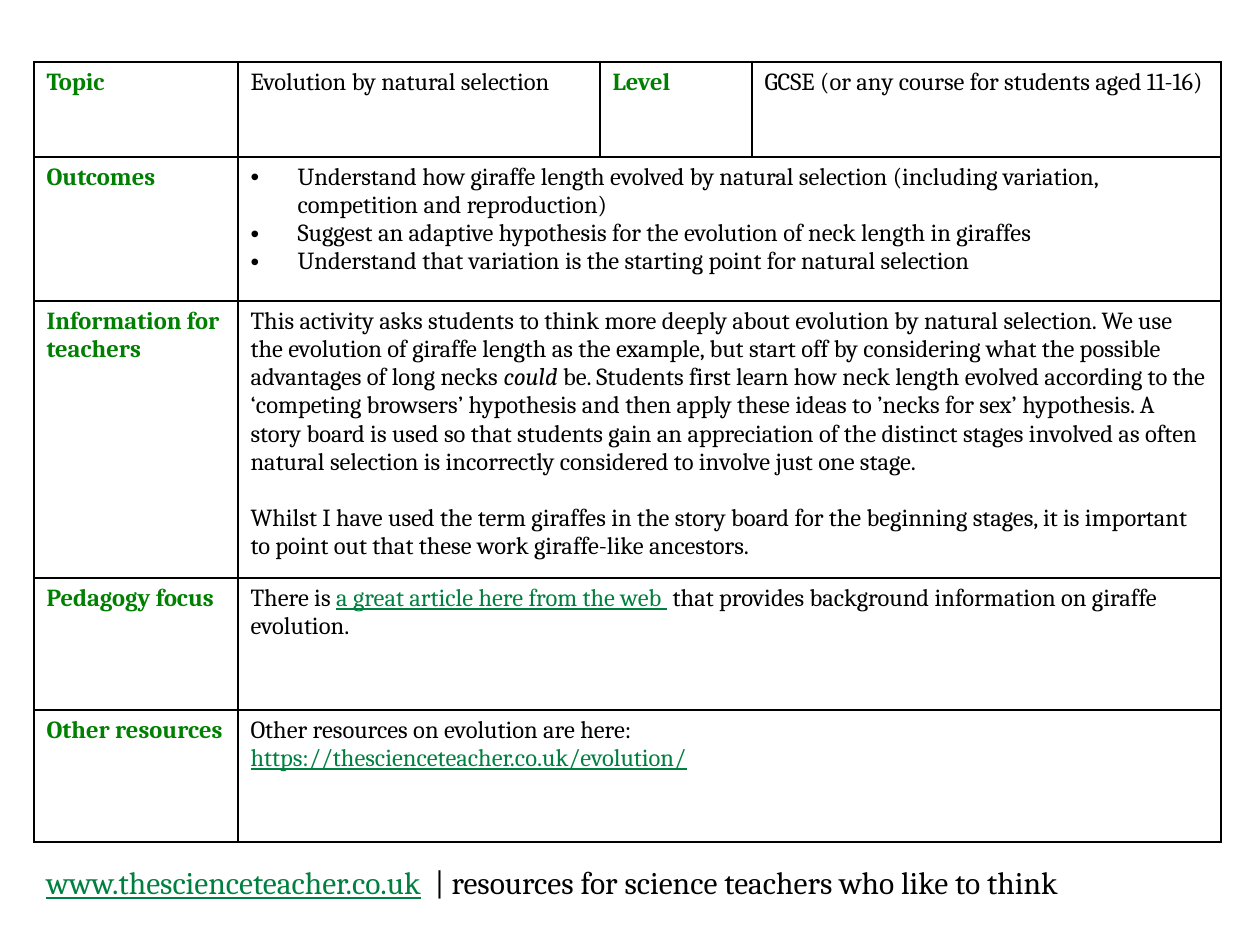
from dataclasses import dataclass

from lxml import etree
from pptx import Presentation
from pptx import util as u
from pptx.dml.color import RGBColor
from pptx.enum import text as t
from pptx.oxml.ns import qn


@dataclass(frozen=True)
class Theme:
    font: str = "Cambria"
    head: str = "008000"
    link: str = "008040"
    ink: str = "000000"
    body: int = 14
    foot: int = 18
    gap: int = 16


THEME = Theme()
PX = 914400 / 126

# Each paragraph is a list of (text, style) runs.
TOP = [
    ("Topic", "head"),
    ("Evolution by natural selection", "ink"),
    ("Level", "head"),
    ("GCSE (or any course for students aged 11-16)", "ink"),
]
ROWS = [
    ("Outcomes", [
        [("Understand how giraffe length evolved by natural selection "
          "(including variation, competition and reproduction)", "ink")],
        [("Suggest an adaptive hypothesis for the evolution of neck length "
          "in giraffes", "ink")],
        [("Understand that variation is the starting point for natural "
          "selection", "ink")],
    ]),
    ("Information for teachers", [
        [("This activity asks students to think more deeply about evolution "
          "by natural selection. We use the evolution of giraffe length as "
          "the example, but start off by considering what the possible "
          "advantages of long necks ", "ink"),
         ("could", "italic"),
         (" be. Students first learn how neck length evolved according to "
          "the ‘competing browsers’ hypothesis and then apply these ideas to "
          "’necks for sex’ hypothesis. A story board is used so that students "
          "gain an appreciation of the distinct stages involved as often "
          "natural selection is incorrectly considered to involve just one "
          "stage.", "ink")],
        [("Whilst I have used the term giraffes in the story board for the "
          "beginning stages, it is important to point out that these work "
          "giraffe-like ancestors.", "ink")],
    ]),
    ("Pedagogy focus", [
        [("There is ", "ink"),
         ("a great article here from the web ", "link"),
         (" that provides background information on giraffe", "ink")],
        [("evolution.", "ink")],
    ]),
    ("Other resources", [
        [("Other resources on evolution are here:", "ink")],
        [("https://thescienceteacher.co.uk/evolution/", "link")],
    ]),
]
FOOT = [
    ("www.thescienceteacher.co.uk", "link"),
    ("  ", "head"),
    ("| resources for science teachers who like to think", "ink"),
]
BULLETS, SPACED = "Outcomes", "Information for teachers"

LEFT, TOP_Y = 34, 62
WIDTHS = [204, 362, 152, 469]
HEIGHTS = [95, 144, 277, 132, 132]
FOOT_BOX = (34, 857, 1116, 50)
INDENT = 47


def px(n):
    return u.Emu(round(n * PX))


def add_bullet(para):
    props = para._p.get_or_add_pPr()
    props.set("marL", str(px(INDENT)))
    props.set("indent", str(-px(INDENT)))
    etree.SubElement(props, qn("a:buFont"), typeface="Arial")
    etree.SubElement(props, qn("a:buChar"), char="•")


def write(frame, paras, size, bullets=False, gap=0):
    """Fill a text frame with paragraphs of styled runs."""
    for i, runs in enumerate(paras):
        para = frame.add_paragraph() if i else frame.paragraphs[0]
        if bullets:
            add_bullet(para)
        if i and gap:
            para.space_before = u.Pt(gap)
        para.font.name = THEME.font
        para.font.size = u.Pt(size)
        for words, style in runs:
            run = para.add_run()
            run.text = words
            font = run.font
            font.name = THEME.font
            font.size = u.Pt(size)
            tint = THEME.ink if style == "italic" else getattr(THEME, style)
            font.color.rgb = RGBColor.from_string(tint)
            font.bold = style == "head" and bool(words.strip())
            font.italic = style == "italic"
            font.underline = style == "link"


def frame_cell(cell):
    """Clear the fill and draw a thin line on all four sides."""
    props = cell._tc.get_or_add_tcPr()
    for side in ("lnL", "lnR", "lnT", "lnB"):
        line = etree.SubElement(props, qn("a:" + side), w=str(u.Pt(1)))
        fill = etree.SubElement(line, qn("a:solidFill"))
        etree.SubElement(fill, qn("a:srgbClr"), val=THEME.ink)
    cell.fill.background()


def add_grid(slide):
    shape = slide.shapes.add_table(
        len(HEIGHTS), len(WIDTHS), px(LEFT), px(TOP_Y),
        px(sum(WIDTHS)), px(sum(HEIGHTS)))
    grid = shape.table
    grid.first_row = grid.horz_banding = False
    for col, width in zip(grid.columns, WIDTHS):
        col.width = px(width)
    for row, height in zip(grid.rows, HEIGHTS):
        row.height = px(height)
    for cell in grid.iter_cells():
        frame_cell(cell)
    for c, run in enumerate(TOP):
        write(grid.cell(0, c).text_frame, [[run]], THEME.body)
    for r, (label, paras) in enumerate(ROWS, 1):
        write(grid.cell(r, 0).text_frame, [[(label, "head")]], THEME.body)
        cell = grid.cell(r, 1)
        cell.merge(grid.cell(r, len(WIDTHS) - 1))
        write(cell.text_frame, paras, THEME.body, label == BULLETS,
              THEME.gap if label == SPACED else 0)


def add_foot(slide):
    box = slide.shapes.add_textbox(*map(px, FOOT_BOX))
    frame = box.text_frame
    frame.word_wrap = True
    frame.auto_size = t.MSO_AUTO_SIZE.SHAPE_TO_FIT_TEXT
    write(frame, [FOOT], THEME.foot)


def main():
    deck = Presentation()
    deck.slide_width, deck.slide_height = px(1260), px(945)
    slide = deck.slides.add_slide(deck.slide_layouts[6])
    add_foot(slide)
    add_grid(slide)
    deck.save("out.pptx")


if __name__ == "__main__":
    main()
